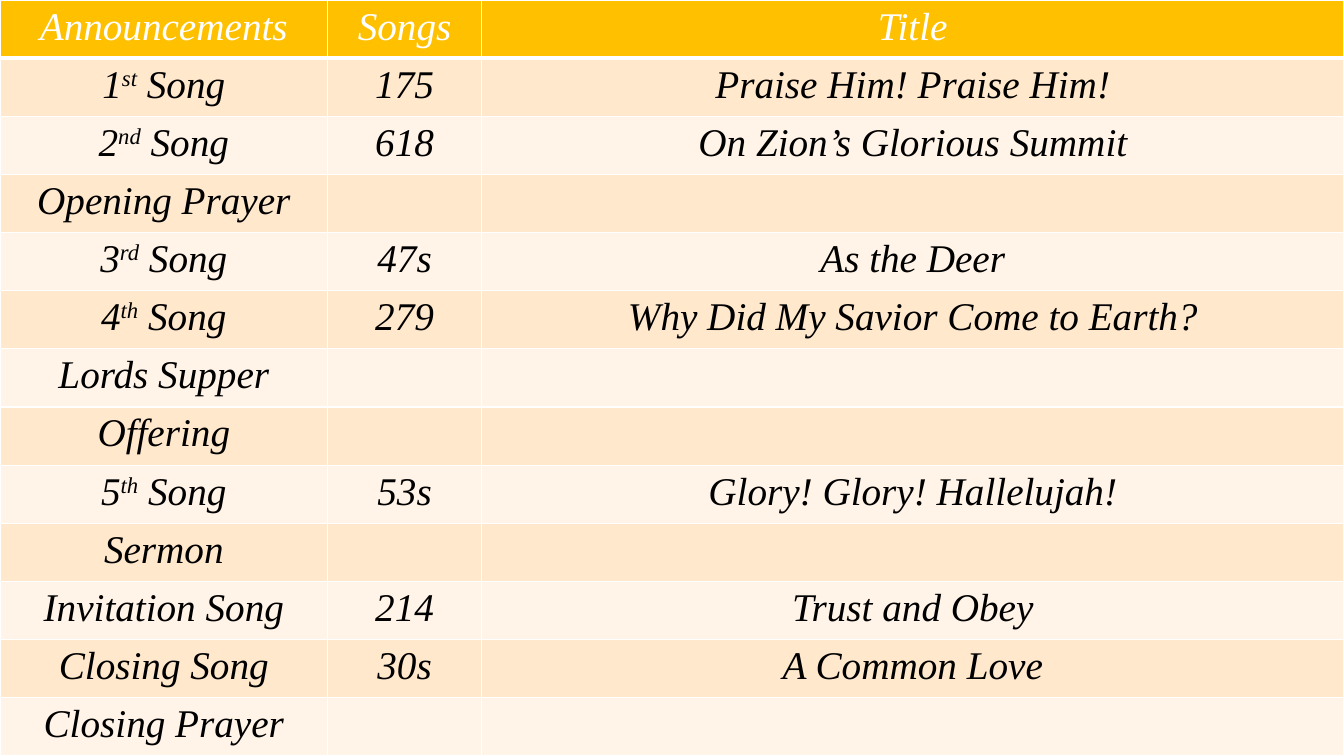
from pptx import Presentation
from pptx.dml.color import RGBColor
from pptx.enum.text import PP_ALIGN
from pptx.oxml.ns import qn
from pptx.util import Pt
from lxml import etree

CENTER = PP_ALIGN.CENTER
BLANK_LAYOUT = 6
SLIDE_WIDTH, SLIDE_HEIGHT = 960, 540
COLORS = {
    "header": "FFC000",
    "odd_row": "FFE8CC",
    "even_row": "FFF4E7",
    "header_text": "FFFFFF",
    "body_text": "000000",
    "border": "FFFFFF",
}
TEXT_FORMAT = {"name": "Times New Roman", "size": Pt(28), "italic": True, "bold": False}
COLUMN_WIDTHS = [234, 110, 616]

# Text between ^ marks is superscript
SERVICE_ORDER = [
    ("Announcements", "Songs", "Title"),
    ("1^st^ Song", "175", "Praise Him! Praise Him!"),
    ("2^nd^ Song", "618", "On Zion’s Glorious Summit"),
    ("Opening Prayer", "", ""),
    ("3^rd^ Song", "47s", "As the Deer"),
    ("4^th^ Song", "279", "Why Did My Savior Come to Earth?"),
    ("Lords Supper", "", ""),
    ("Offering", "", ""),
    ("5^th^ Song", "53s", "Glory! Glory! Hallelujah!"),
    ("Sermon", "", ""),
    ("Invitation Song", "214", "Trust and Obey"),
    ("Closing Song", "30s", "A Common Love"),
    ("Closing Prayer", "", ""),
]


def set_borders(cell, bottom_width):
    properties = cell._tc.get_or_add_tcPr()
    for side, width in (("L", 1), ("R", 1), ("T", 1), ("B", bottom_width)):
        border = etree.SubElement(properties, qn(f"a:ln{side}"), w=str(Pt(width)))
        fill = etree.SubElement(border, qn("a:solidFill"))
        etree.SubElement(fill, qn("a:srgbClr"), val=COLORS["border"])


def write_entry(cell, entry, color):
    paragraph = cell.text_frame.paragraphs[0]
    paragraph.alignment = CENTER
    for index, part in enumerate(entry.split("^")):
        if not part:
            continue
        run = paragraph.add_run()
        run.text = part
        for attribute, value in TEXT_FORMAT.items():
            setattr(run.font, attribute, value)
        run.font.color.rgb = RGBColor.from_string(color)
        if index % 2:
            run.font._element.set("baseline", "30000")


def add_service_table(slide, left, top, width, height):
    row_count = len(SERVICE_ORDER)
    service = slide.shapes.add_table(
        row_count, len(COLUMN_WIDTHS), Pt(left), Pt(top), Pt(width), Pt(height)
    ).table
    for column, column_width in zip(service.columns, COLUMN_WIDTHS):
        column.width = Pt(column_width * width / sum(COLUMN_WIDTHS))

    for row_index, entries in enumerate(SERVICE_ORDER):
        service.rows[row_index].height = Pt(height / row_count)
        is_header = row_index == 0
        band = "header" if is_header else "odd_row" if row_index % 2 else "even_row"
        text_color = COLORS["header_text" if is_header else "body_text"]
        for cell, entry in zip(service.rows[row_index].cells, entries):
            set_borders(cell, 3 if is_header else 1)
            cell.fill.solid()
            cell.fill.fore_color.rgb = RGBColor.from_string(COLORS[band])
            write_entry(cell, entry, text_color)


def main():
    presentation = Presentation()
    presentation.slide_width = Pt(SLIDE_WIDTH)
    presentation.slide_height = Pt(SLIDE_HEIGHT)
    slide = presentation.slides.add_slide(presentation.slide_layouts[BLANK_LAYOUT])
    # Order of service fills the whole slide
    add_service_table(slide, 0, 0, SLIDE_WIDTH, SLIDE_HEIGHT)
    presentation.save("out.pptx")


if __name__ == "__main__":
    main()
